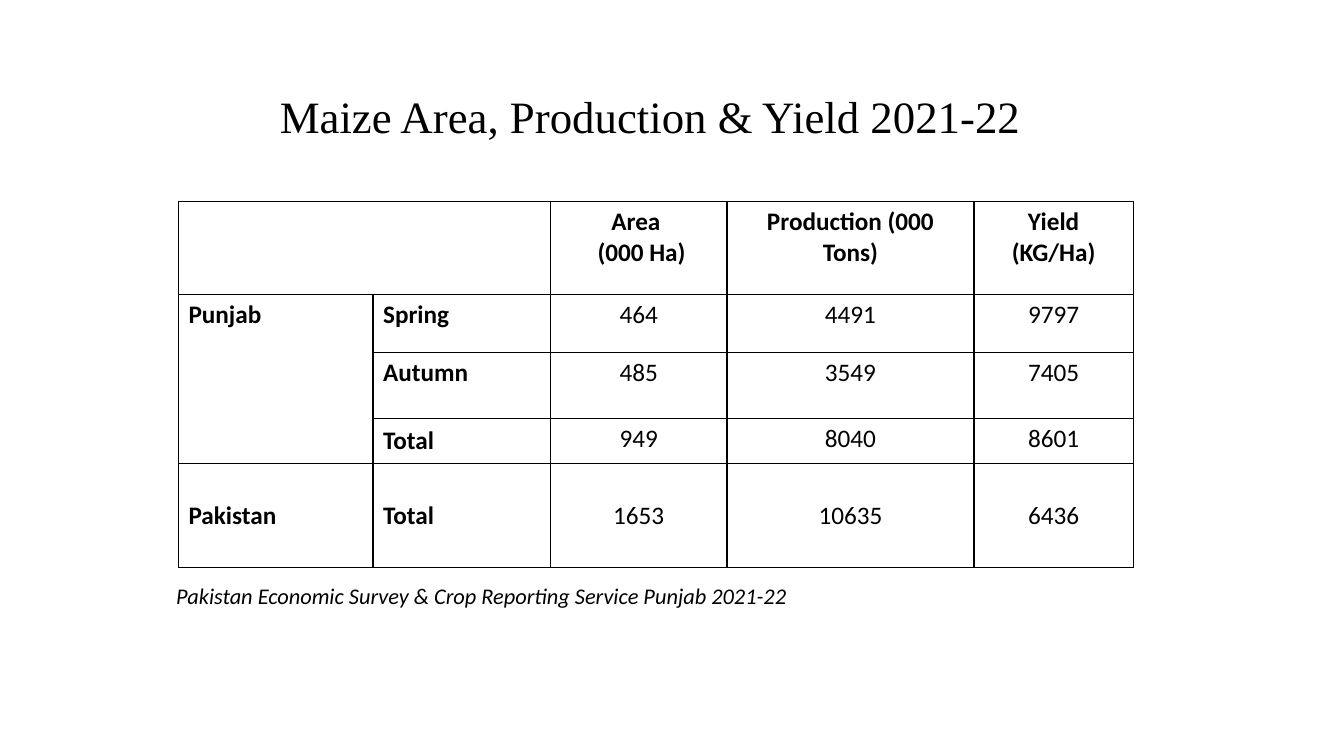
import pptx
import pptx.util
import pptx.dml.color
import pptx.enum.text
import pptx.oxml
import pptx.oxml.ns

Inches = pptx.util.Inches
Pt = pptx.util.Pt
ALIGN = pptx.enum.text.PP_ALIGN
ANCHOR = pptx.enum.text.MSO_ANCHOR

COLORS = {"ink": "000000", "paper": "FFFFFF"}
BODY_FONT = "Calibri"
TITLE_FONT = "Times New Roman"


class SlideWriter:
    def __init__(self, presentation):
        self.slide = presentation.slides.add_slide(presentation.slide_layouts[5])

    def color(self, name):
        return pptx.dml.color.RGBColor.from_string(COLORS[name])

    def format_text(self, frame, size, font=BODY_FONT, align=ALIGN.LEFT, bold=False, italic=False):
        for paragraph in frame.paragraphs:
            paragraph.alignment = align
            for run in paragraph.runs:
                run.font.size = Pt(size)
                run.font.name = font
                run.font.bold = bold
                run.font.italic = italic
                run.font.color.rgb = self.color("ink")

    def title(self, text, left, top, width, height):
        heading = self.slide.shapes.title
        heading.left, heading.top = Inches(left), Inches(top)
        heading.width, heading.height = Inches(width), Inches(height)
        frame = heading.text_frame
        frame.text = text
        frame.word_wrap = True
        frame.auto_size = pptx.enum.text.MSO_AUTO_SIZE.NONE
        frame.vertical_anchor = ANCHOR.TOP
        self.format_text(frame, 32, TITLE_FONT, ALIGN.CENTER)

    def caption(self, text, left, top, width, height):
        box = self.slide.shapes.add_textbox(Inches(left), Inches(top), Inches(width), Inches(height))
        box.text_frame.word_wrap = True
        box.text_frame.text = text
        self.format_text(box.text_frame, 16, italic=True)

    def border(self, cell):
        properties = cell._tc.get_or_add_tcPr()
        for position, side in enumerate(("lnL", "lnR", "lnT", "lnB")):
            properties.insert(position, pptx.oxml.parse_xml(
                f'<a:{side} {pptx.oxml.ns.nsdecls("a")} w="12700"><a:solidFill>'
                f'<a:srgbClr val="{COLORS["ink"]}"/></a:solidFill></a:{side}>'))

    def table(self, rows, left, top, widths, heights, merges, middle):
        table = self.slide.shapes.add_table(
            len(heights), len(widths), Inches(left), Inches(top),
            Inches(sum(widths)), Inches(sum(heights))).table
        for column, width in zip(table.columns, widths):
            column.width = Inches(width)
        for row, height in zip(table.rows, heights):
            row.height = Inches(height)
        for first, last in merges:
            table.cell(*first).merge(table.cell(*last))
        for r, row in enumerate(rows):
            for c, text in enumerate(row):
                cell = table.cell(r, c)
                cell.fill.solid()
                cell.fill.fore_color.rgb = self.color("paper")
                self.border(cell)
                cell.vertical_anchor = ANCHOR.MIDDLE if (r, c) in middle else ANCHOR.TOP
                cell.text_frame.text = text
                self.format_text(cell.text_frame, 18, align=ALIGN.CENTER if c > 1 else ALIGN.LEFT,
                                 bold=r == 0 or c < 2)


def main():
    presentation = pptx.Presentation()
    presentation.slide_width = Inches(13.33)
    presentation.slide_height = Inches(7.5)
    writer = SlideWriter(presentation)

    maize_rows = [
        ["", "", "Area \n (000 Ha)", "Production (000 Tons)", "Yield (KG/Ha)"],
        ["Punjab", "Spring", "464", "4491", "9797"],
        ["", "Autumn", "485", "3549", "7405"],
        ["", "Total", "949", "8040", "8601"],
        ["Pakistan", "Total", "1653", "10635", "6436"],
    ]
    writer.table(
        maize_rows, 1.77, 2,
        widths=[1.93, 1.76, 1.75, 2.45, 1.58],
        heights=[0.92, 0.58, 0.65, 0.45, 1.03],
        merges=[((0, 0), (0, 1)), ((1, 0), (3, 0))],
        middle={(3, 1)} | {(4, c) for c in range(5)})
    writer.caption("Pakistan Economic Survey & Crop Reporting Service Punjab 2021-22",
                   1.65, 5.73, 6.67, 0.37)
    writer.title("Maize Area, Production & Yield 2021-22", 1.79, 0.83, 9.32, 0.94)
    presentation.save("out.pptx")


if __name__ == "__main__":
    main()
